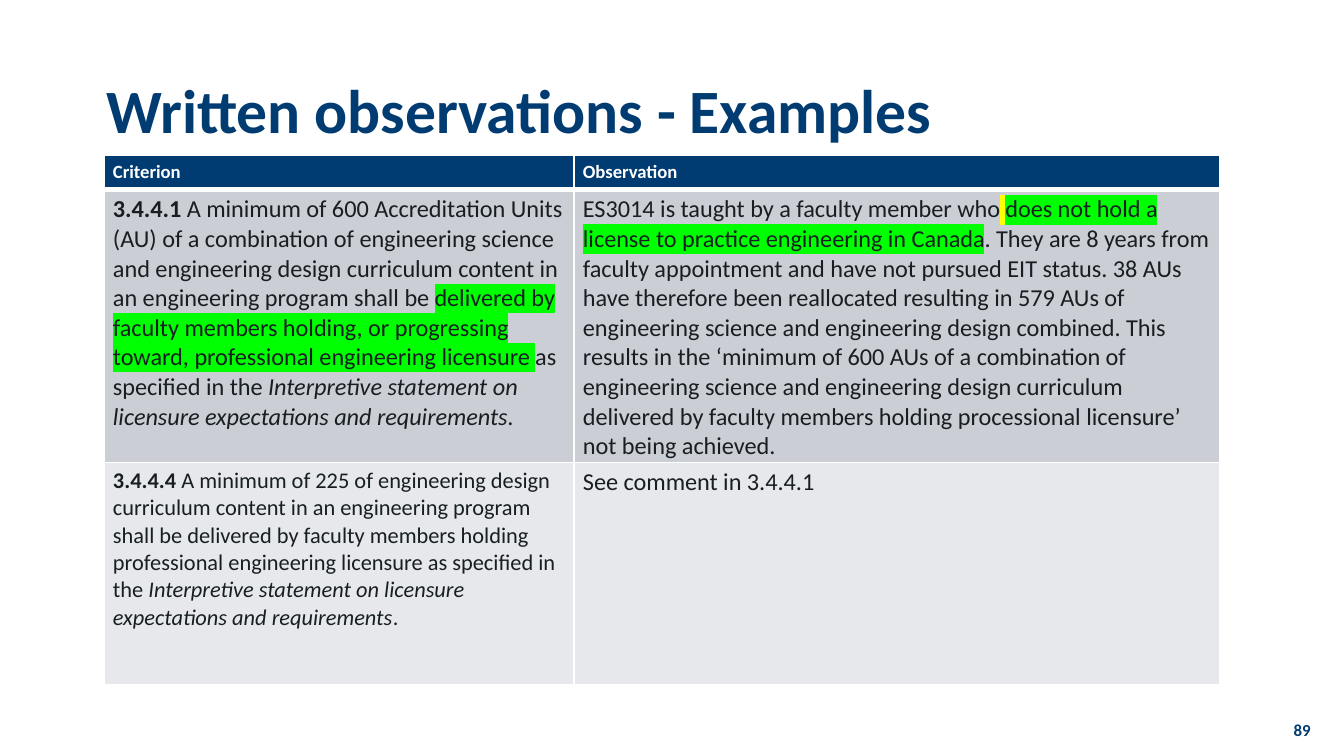
"""Build the slide of written observations as a two-column table."""
from dataclasses import dataclass
from typing import Optional

from lxml import etree
from pptx import Presentation
from pptx import util as u
from pptx.dml.color import RGBColor
from pptx.enum import text
from pptx.oxml import ns

SCALE = 914400 / 134.4
FONT = "Calibri"
HEX = {"navy": "003C71", "white": "FFFFFF", "ink": "171F23", "dark": "CCCED5",
       "light": "E7E8EB", "green": "00FF00", "yellow": "FFFF00"}
COLS = (470, 646)
ROWS = (35, 267, 222)


@dataclass
class Run:
    words: str
    bold: bool = False
    slant: bool = False
    mark: Optional[str] = None


@dataclass
class Cell:
    runs: list[Run]
    size: int
    fill: str
    ink: str = "ink"
    head: bool = False


@dataclass
class Label:
    box: tuple[int, int, int, int]
    words: str
    size: int
    align: text.PP_ALIGN
    space: float = 1.0


LABELS = [
    Label((93, 40, 1159, 147), "Written observations - Examples", 33, text.PP_ALIGN.LEFT, 0.9),
    Label((1275, 719, 49, 22), "89", 9, text.PP_ALIGN.RIGHT),
]

STATEMENT = [Run("Interpretive statement on licensure expectations and requirements", slant=True),
             Run(".")]

GRID = [
    [Cell([Run(name, bold=True)], 10, "navy", "white", True)
     for name in ("Criterion", "Observation")],
    [
        Cell([
            Run("3.4.4.1", bold=True),
            Run(" A minimum of 600 Accreditation Units (AU) of a combination of engineering "
                "science and engineering design curriculum content in an engineering program "
                "shall be "),
            Run("delivered by faculty members holding, or progressing toward, professional "
                "engineering licensure ", mark="green"),
            Run("as specified in the "),
            *STATEMENT,
        ], 13, "dark"),
        Cell([
            Run("ES3014 is taught by a faculty member who"),
            Run(" ", mark="yellow"),
            Run("does not hold a license to practice engineering in Canada", mark="green"),
            Run(". They are 8 years from faculty appointment and have not pursued EIT status. "
                "38 AUs have therefore been reallocated resulting in 579 AUs of engineering "
                "science and engineering design combined. This results in the ‘minimum of 600 "
                "AUs of a combination of engineering science and engineering design curriculum "
                "delivered by faculty members holding processional licensure’ not being "
                "achieved."),
        ], 13, "dark"),
    ],
    [
        Cell([
            Run("3.4.4.4", bold=True),
            Run(" A minimum of 225 of engineering design curriculum content in an engineering "
                "program shall be delivered by faculty members holding professional engineering "
                "licensure as specified in the "),
            *STATEMENT,
        ], 12, "light"),
        Cell([Run("See comment in 3.4.4.1")], 13, "light"),
    ],
]


def px(count: int) -> u.Emu:
    return u.Emu(round(count * SCALE))


def tint(parent, name: str) -> None:
    etree.SubElement(parent, ns.qn("a:srgbClr"), val=HEX[name])


def add_run(para, part: Run, size: int, ink: str) -> None:
    run = para.add_run()
    run.text = part.words
    font = run.font
    font.size, font.bold, font.italic = u.Pt(size), part.bold, part.slant
    font.color.rgb = RGBColor.from_string(HEX[ink])
    if part.mark:
        tint(etree.SubElement(run._r.get_or_add_rPr(), ns.qn("a:highlight")), part.mark)
    font.name = FONT


def add_label(slide, label: Label) -> None:
    frame = slide.shapes.add_textbox(*map(px, label.box)).text_frame
    frame.word_wrap = True
    frame.vertical_anchor = text.MSO_ANCHOR.MIDDLE
    frame.margin_top = frame.margin_bottom = 0
    para = frame.paragraphs[0]
    para.alignment, para.line_spacing = label.align, label.space
    add_run(para, Run(label.words, bold=True), label.size, "navy")


def add_edge(cell, side: str, width: float) -> None:
    line = etree.SubElement(cell._tc.get_or_add_tcPr(), ns.qn(f"a:ln{side}"),
                            w=str(u.Pt(width)))
    tint(etree.SubElement(line, ns.qn("a:solidFill")), "white")


def fill_cell(cell, data: Cell, below: bool) -> None:
    cell.margin_left = cell.margin_right = px(9)
    cell.margin_top = cell.margin_bottom = px(5)
    cell.vertical_anchor = text.MSO_ANCHOR.MIDDLE if data.head else text.MSO_ANCHOR.TOP
    for side in "LRTB":
        thick = (side == "B" and data.head) or (side == "T" and below)
        add_edge(cell, side, 3 if thick else 1)
    cell.fill.solid()
    cell.fill.fore_color.rgb = RGBColor.from_string(HEX[data.fill])
    for part in data.runs:
        add_run(cell.text_frame.paragraphs[0], part, data.size, data.ink)


def add_grid(slide) -> None:
    table = slide.shapes.add_table(len(ROWS), len(COLS), px(104), px(155),
                                   px(sum(COLS)), px(sum(ROWS))).table
    for col, width in zip(table.columns, COLS):
        col.width = px(width)
    for row, height in zip(table.rows, ROWS):
        row.height = px(height)
    for r, line in enumerate(GRID):
        for c, data in enumerate(line):
            fill_cell(table.cell(r, c), data, r == 1)


def main() -> None:
    deck = Presentation()
    deck.slide_width, deck.slide_height = px(1344), px(756)
    slide = deck.slides.add_slide(deck.slide_layouts[6])
    for label in LABELS:
        add_label(slide, label)
    add_grid(slide)
    deck.save("out.pptx")


if __name__ == "__main__":
    main()
